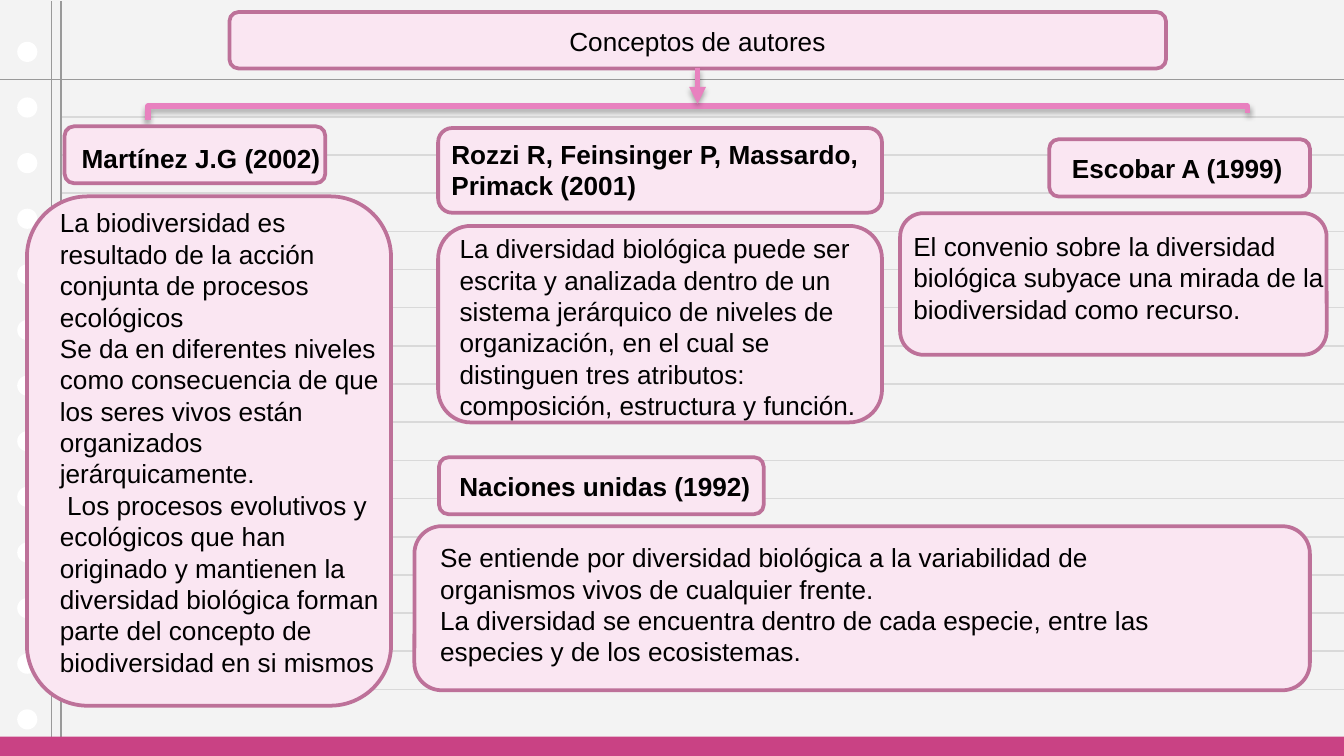
from dataclasses import dataclass

from lxml import etree
from pptx import Presentation
from pptx.dml.color import RGBColor
from pptx.enum.shapes import MSO_CONNECTOR, MSO_SHAPE
from pptx.enum.text import MSO_ANCHOR, MSO_AUTO_SIZE, PP_ALIGN
from pptx.oxml.ns import qn
from pptx.util import Pt

STRAIGHT, ELBOW = MSO_CONNECTOR.STRAIGHT, MSO_CONNECTOR.ELBOW
RECT, ROUNDED, OVAL = MSO_SHAPE.RECTANGLE, MSO_SHAPE.ROUNDED_RECTANGLE, MSO_SHAPE.OVAL
TOP, GROW = MSO_ANCHOR.TOP, MSO_AUTO_SIZE.SHAPE_TO_FIT_TEXT
LEFT, CENTER = PP_ALIGN.LEFT, PP_ALIGN.CENTER

WIDTH, HEIGHT = 720, 405
PAPER, WHITE, MAGENTA = "F3F3F3", "FFFFFF", "C94284"
RULE, MARGIN = "D9D9D9", "999999"
CARD_FILL, CARD_LINE, ARROW = "FAE6F2", "BD7199", "E881BF"
FONT, TEXT_SIZE, TEXT_COLOR = "Arial", 14, "000000"
TITLE_ONLY = 5


@dataclass
class Box:
    left: float
    top: float
    width: float
    height: float

    def lengths(self) -> tuple:
        return Pt(self.left), Pt(self.top), Pt(self.width), Pt(self.height)


@dataclass
class Card:
    frame: Box
    text_area: Box
    text: str
    bold: bool = False


CARDS = [
    # Martínez
    Card(Box(34.6, 67.7, 139.7, 30.5), Box(36.7, 72.7, 151.2, 24.5),
         "Martínez J.G (2002)", True),
    Card(Box(14.4, 105.2, 195.1, 272.9), Box(25, 107.3, 186.5, 278.6),
         "La biodiversidad es resultado de la acción conjunta de procesos ecológicos\n"
         "Se da en diferentes niveles como consecuencia de que los seres vivos están "
         "organizados jerárquicamente.\n"
         " Los procesos evolutivos y ecológicos que han originado y mantienen la "
         "diversidad biológica forman parte del concepto de biodiversidad en si mismos"),
    # Rozzi and others
    Card(Box(234.7, 68.6, 237.8, 45.4), Box(234.7, 70.6, 238.3, 41),
         "Rozzi R, Feinsinger P, Massardo, Primack (2001)", True),
    Card(Box(234.7, 121, 237.8, 105.3), Box(239.2, 121, 237.6, 108.7),
         "La diversidad biológica puede ser escrita y analizada dentro de un sistema "
         "jerárquico de niveles de organización, en el cual se distinguen tres "
         "atributos: composición, estructura y función."),
    # Escobar
    Card(Box(562.1, 74.6, 139.7, 30.7), Box(567.2, 77.9, 151.2, 24.5),
         "Escobar A (1999)", True),
    Card(Box(482.2, 114.2, 228.5, 75.9), Box(482.2, 119.9, 237.6, 58.3),
         "El convenio sobre la diversidad biológica subyace una mirada de la "
         "biodiversidad como recurso."),
    # Naciones unidas
    Card(Box(235.2, 245, 174, 30.5), Box(239, 248.4, 173.5, 24.5),
         "Naciones unidas (1992)", True),
    Card(Box(222, 281.9, 479.7, 87.9), Box(228.7, 286.6, 414, 74.9),
         "Se entiende por diversidad biológica a la variabilidad de organismos vivos "
         "de cualquier frente.\n"
         "La diversidad se encuentra dentro de cada especie, entre las especies y de "
         "los ecosistemas."),
]


def rgb(hex_color: str) -> RGBColor:
    return RGBColor.from_string(hex_color)


def add_filled(shapes, kind, box: Box, fill: str, outline: str = ""):
    shape = shapes.add_shape(kind, *box.lengths())
    shape.shadow.inherit = False
    shape.fill.solid()
    shape.fill.fore_color.rgb = rgb(fill)
    if outline:
        shape.line.color.rgb = rgb(outline)
        shape.line.width = Pt(2)
    else:
        shape.line.fill.background()
    return shape


def add_line(shapes, start: tuple, end: tuple, color: str, weight: float,
             kind=STRAIGHT, shadow: bool = False, arrowhead: bool = False):
    line = shapes.add_connector(kind, *(Pt(value) for value in (*start, *end)))
    line.line.color.rgb = rgb(color)
    line.line.width = Pt(weight)
    properties = line.element.spPr
    if arrowhead:
        etree.SubElement(properties.find(qn("a:ln")), qn("a:tailEnd"), type="triangle")
    effects = etree.SubElement(properties, qn("a:effectLst"))
    if shadow:
        outer = etree.SubElement(effects, qn("a:outerShdw"), blurRad=str(Pt(3.1)),
                                 dist=str(Pt(1.8)), dir="5400000", rotWithShape="0")
        black = etree.SubElement(outer, qn("a:srgbClr"), val="000000")
        etree.SubElement(black, qn("a:alpha"), val="35000")
    return line


def write_text(shape, text: str, bold: bool = False, align=LEFT) -> None:
    frame = shape.text_frame
    frame.word_wrap = True
    frame.auto_size = GROW
    frame.vertical_anchor = TOP
    frame.text = text
    for paragraph in frame.paragraphs:
        paragraph.alignment = align
        for run in paragraph.runs:
            run.font.name = FONT
            run.font.size = Pt(TEXT_SIZE)
            run.font.bold = bold
            run.font.color.rgb = rgb(TEXT_COLOR)


def draw_notebook(slide) -> None:
    slide.background.fill.solid()
    slide.background.fill.fore_color.rgb = rgb(PAPER)
    for hole in range(13):
        add_filled(slide.shapes, OVAL, Box(9.2, 22.4 + 29.8 * hole, 10.8, 10.8), WHITE)
    for row in range(16):
        y = 62.6 + 20.45 * row
        add_line(slide.shapes, (32.6, y), (WIDTH, y), RULE, 0.86)
    for x in (27.8, 32.7):
        add_line(slide.shapes, (x, 0.7), (x, HEIGHT), MARGIN, 0.62)
    add_line(slide.shapes, (0, 42.5), (WIDTH, 42.5), MARGIN, 0.75)
    add_filled(slide.shapes, RECT, Box(-1, 394.6, 721, 12.2), MAGENTA)


def draw_title(slide) -> None:
    add_filled(slide.shapes, ROUNDED, Box(122.9, 6.4, 501.8, 30.3), CARD_FILL, CARD_LINE)
    title = slide.shapes.title
    title.left, title.top, title.width, title.height = Box(190.8, 10.1, 365.8, 24.5).lengths()
    write_text(title, "Conceptos de autores", align=CENTER)
    # Bring the title in front of the notebook page
    slide.shapes.element.append(title.element)


def draw_branches(shapes) -> None:
    # A quarter turn lays the tall elbow across the page
    center_x, center_y, half_span, half_drop = 373.7, 62.3, 294.5, 1.8
    bracket = add_line(shapes, (center_x + half_drop, center_y + half_span),
                       (center_x - half_drop, center_y - half_span),
                       ARROW, 3, ELBOW, shadow=True)
    properties = bracket.element.spPr
    properties.find(qn("a:xfrm")).set("rot", "5400000")
    adjustments = properties.find(qn("a:prstGeom")).find(qn("a:avLst"))
    etree.SubElement(adjustments, qn("a:gd"), name="adj1", fmla="val 200000")
    add_line(shapes, (373.7, 36.7), (373.7, 55.6), ARROW, 3, shadow=True, arrowhead=True)


def draw_card(shapes, card: Card) -> None:
    add_filled(shapes, ROUNDED, card.frame, CARD_FILL, CARD_LINE)
    write_text(shapes.add_textbox(*card.text_area.lengths()), card.text, card.bold)


def main() -> None:
    deck = Presentation()
    deck.slide_width, deck.slide_height = Pt(WIDTH), Pt(HEIGHT)
    slide = deck.slides.add_slide(deck.slide_layouts[TITLE_ONLY])
    draw_notebook(slide)
    draw_title(slide)
    draw_branches(slide.shapes)
    for card in CARDS:
        draw_card(slide.shapes, card)
    deck.save("out.pptx")


if __name__ == "__main__":
    main()
